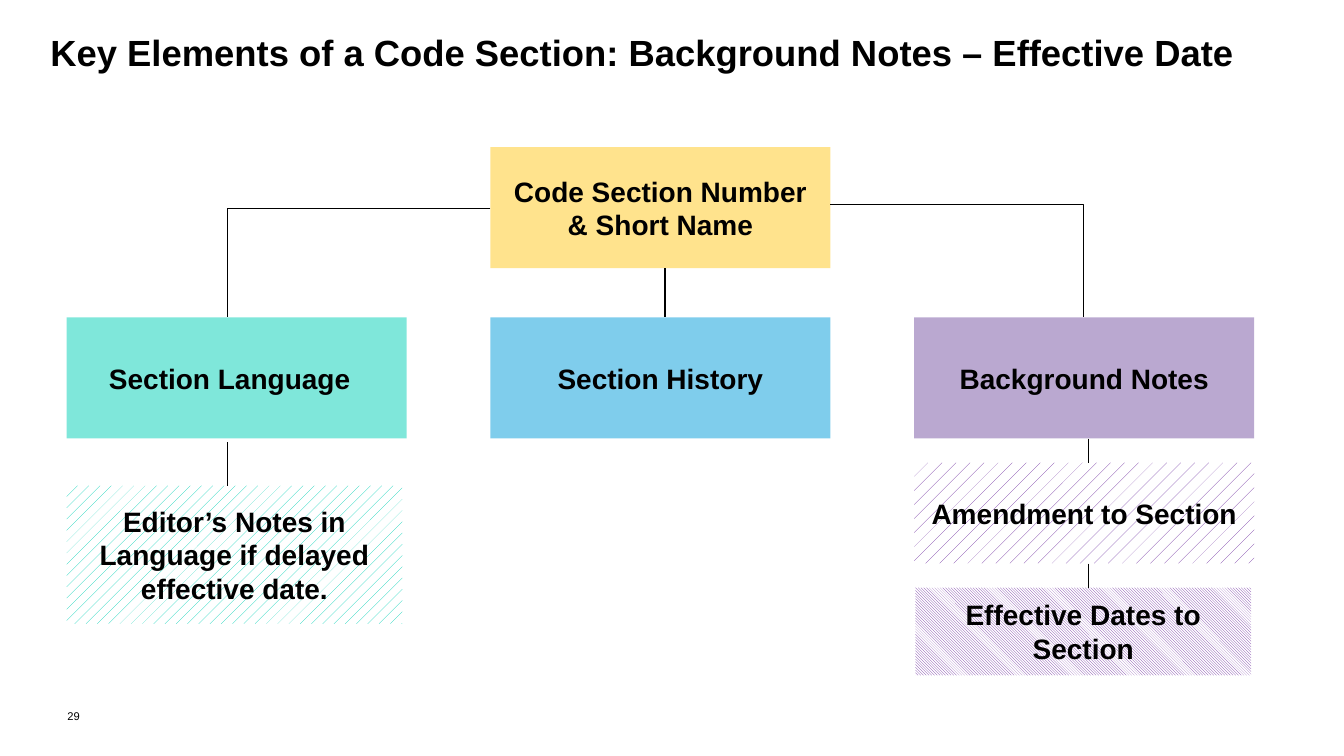
import pptx
import pptx.util
import pptx.dml.color
import pptx.enum.dml
import pptx.enum.shapes
import pptx.enum.text
from lxml import etree
from pptx.oxml.ns import qn

Cm, Pt = pptx.util.Cm, pptx.util.Pt
PATTERN = pptx.enum.dml.MSO_PATTERN
CONNECTOR = pptx.enum.shapes.MSO_CONNECTOR
ALIGN = pptx.enum.text.PP_ALIGN
ANCHOR = pptx.enum.text.MSO_ANCHOR

# Content, with lengths in cm
TITLE = "Key Elements of a Code Section: Background Notes – Effective Date"
PAGE = "29"
LEFT, STEP = 1.68, 10.68
COLS = [LEFT + STEP * i for i in range(3)]
BOX_W, BOX_H, NOTE_W = 8.57, 3.05, 8.46
TOP_Y, ROW_Y = 3.71, 8.0
INSET = 0.3

# text, left, top, width, height, colour, pattern (None = half-transparent), right inset
BOXES = [
    ("Code Section Number & Short Name", COLS[1], TOP_Y, BOX_W, BOX_H, "FFC91D", None, INSET),
    ("Section Language", COLS[0], ROW_Y, BOX_W, BOX_H, "00D0B6", None, 0.65),
    ("Section History", COLS[1], ROW_Y, BOX_W, BOX_H, "009CDB", None, INSET),
    ("Background Notes", COLS[2], ROW_Y, BOX_W, BOX_H, "7653A3", None, INSET),
    ("Amendment to Section", COLS[2], 11.66, BOX_W, 2.54, "7030A0",
     PATTERN.PERCENT_5, INSET),
    ("Effective Dates to Section", COLS[2] + 0.03, 14.81, NOTE_W, 2.21, "7030A0",
     PATTERN.LIGHT_DOWNWARD_DIAGONAL, INSET),
    ("Editor’s Notes in Language if delayed effective date.", COLS[0], 12.24, NOTE_W, 3.48,
     "00D0B6", PATTERN.PERCENT_10, INSET),
]

# start x, start y, end x, end y, line width in pt
TOP_END, ROW_END = TOP_Y + BOX_H, ROW_Y + BOX_H
LINKS = [
    (16.76, TOP_END, 16.76, ROW_Y, 1),
    (COLS[1], 5.25, 5.74, ROW_Y, 1),
    (COLS[1] + BOX_W, 5.16, 27.31, ROW_Y, 1),
    (27.43, ROW_END, 27.43, 11.66, 1),
    (27.43, 14.2, 27.43, 14.81, 1),
    (5.74, 11.15, 5.74, 12.24, 0.5),
]


def rgb(color):
    return pptx.dml.color.RGBColor.from_string(color)


def write(sp, text, size, bold, align, anchor, insets):
    tf = sp.text_frame
    tf.word_wrap = True
    tf.auto_size = pptx.enum.text.MSO_AUTO_SIZE.NONE
    tf.vertical_anchor = anchor
    tf.margin_left, tf.margin_top, tf.margin_right, tf.margin_bottom = map(Cm, insets)
    p = tf.paragraphs[0]
    p.alignment = align
    r = p.add_run()
    r.text = text
    r.font.name, r.font.size, r.font.bold = "Arial", Pt(size), bold
    r.font.color.rgb = rgb("000000")
    return p


def add_box(s, text, x, y, w, h, color, pattern, right):
    sp = s.shapes.add_shape(pptx.enum.shapes.MSO_SHAPE.RECTANGLE, Cm(x), Cm(y), Cm(w), Cm(h))
    sp.shadow.inherit = False
    sp.line.fill.background()
    if pattern is None:
        sp.fill.solid()
        sp.fill.fore_color.rgb = rgb(color)
        clr = sp.fill._xPr.find(".//" + qn("a:srgbClr"))
        etree.SubElement(clr, qn("a:alpha"), val="50000")
    else:
        sp.fill.patterned()
        sp.fill.pattern = pattern
        sp.fill.fore_color.rgb = rgb(color)
        sp.fill.back_color.rgb = rgb("FFFFFF")
    write(sp, text, 20, True, ALIGN.CENTER, ANCHOR.MIDDLE, (INSET, 0.13, right, 0.13))


def add_link(s, x1, y1, x2, y2, width):
    bent = x1 != x2
    kind = CONNECTOR.ELBOW if bent else CONNECTOR.STRAIGHT
    cxn = s.shapes.add_connector(kind, Cm(x1), Cm(y1), Cm(x2), Cm(y2))
    cxn.line.color.rgb = rgb("000000")
    cxn.line.width = Pt(width)
    sp_pr = cxn._element.spPr
    etree.SubElement(sp_pr, qn("a:effectLst"))
    if bent:  # the bend sits right above the end point
        guides = sp_pr.find(".//" + qn("a:avLst"))
        etree.SubElement(guides, qn("a:gd"), name="adj1", fmla="val 100000")


def main():
    prs = pptx.Presentation()
    prs.slide_width, prs.slide_height = Cm(33.87), Cm(19.05)
    s = prs.slides.add_slide(prs.slide_layouts[5])

    # Title
    title = s.shapes.title
    title.left, title.top, title.width, title.height = Cm(1.27), Cm(0.79), Cm(30.91), Cm(2.82)
    p = write(title, TITLE, 26, True, ALIGN.LEFT, ANCHOR.TOP, (0, 0, 0, 0))
    p.line_spacing = Pt(30)

    # Chart of boxes and links
    for box in BOXES:
        add_box(s, *box)
    for link in LINKS:
        add_link(s, *link)

    # Page number
    number = s.shapes.add_textbox(Cm(1.7), Cm(17.75), Cm(0.76), Cm(0.61))
    write(number, PAGE, 8, False, ALIGN.LEFT, ANCHOR.MIDDLE, (0, 0.13, 0.25, 0.13))

    prs.save("out.pptx")


if __name__ == "__main__":
    main()
